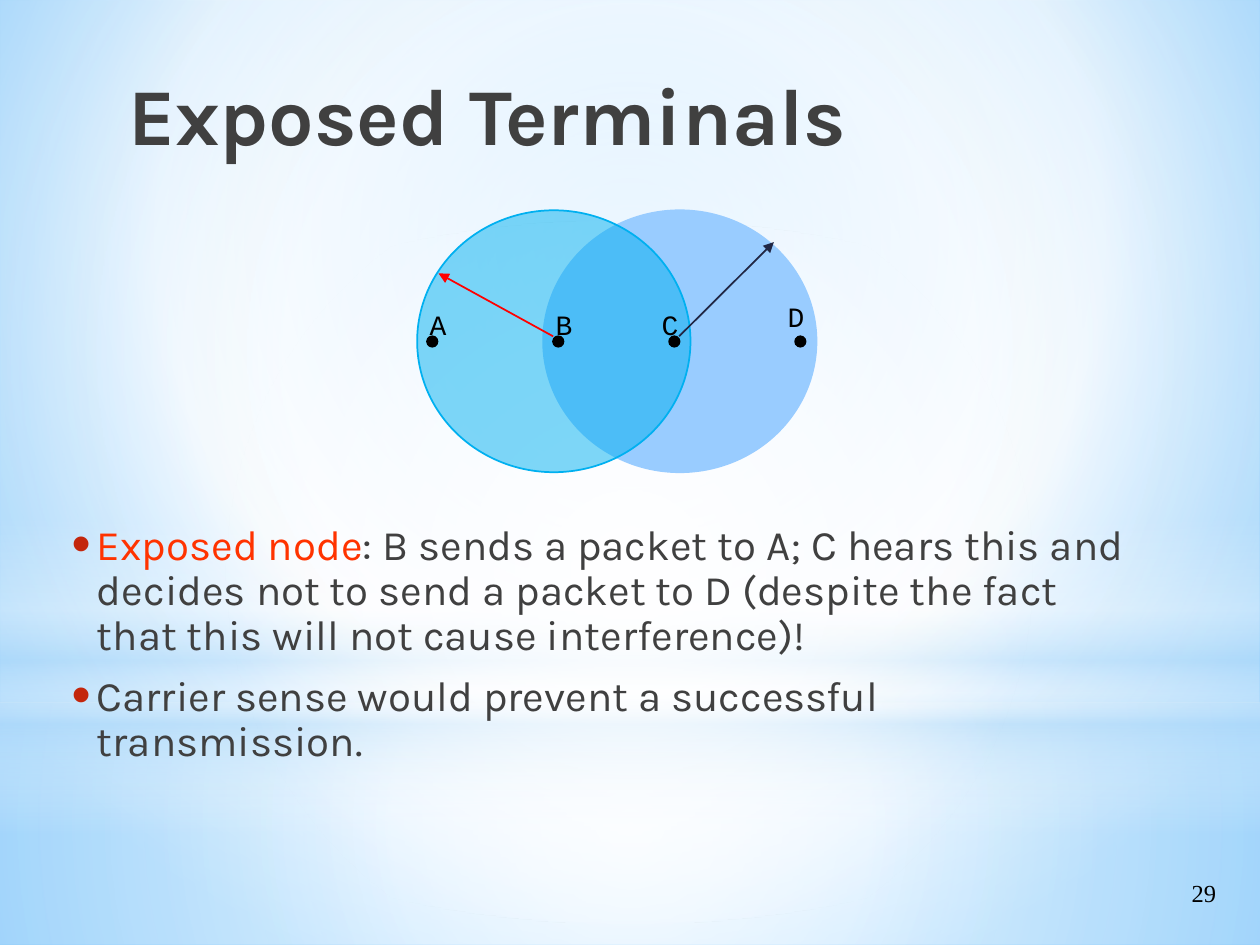
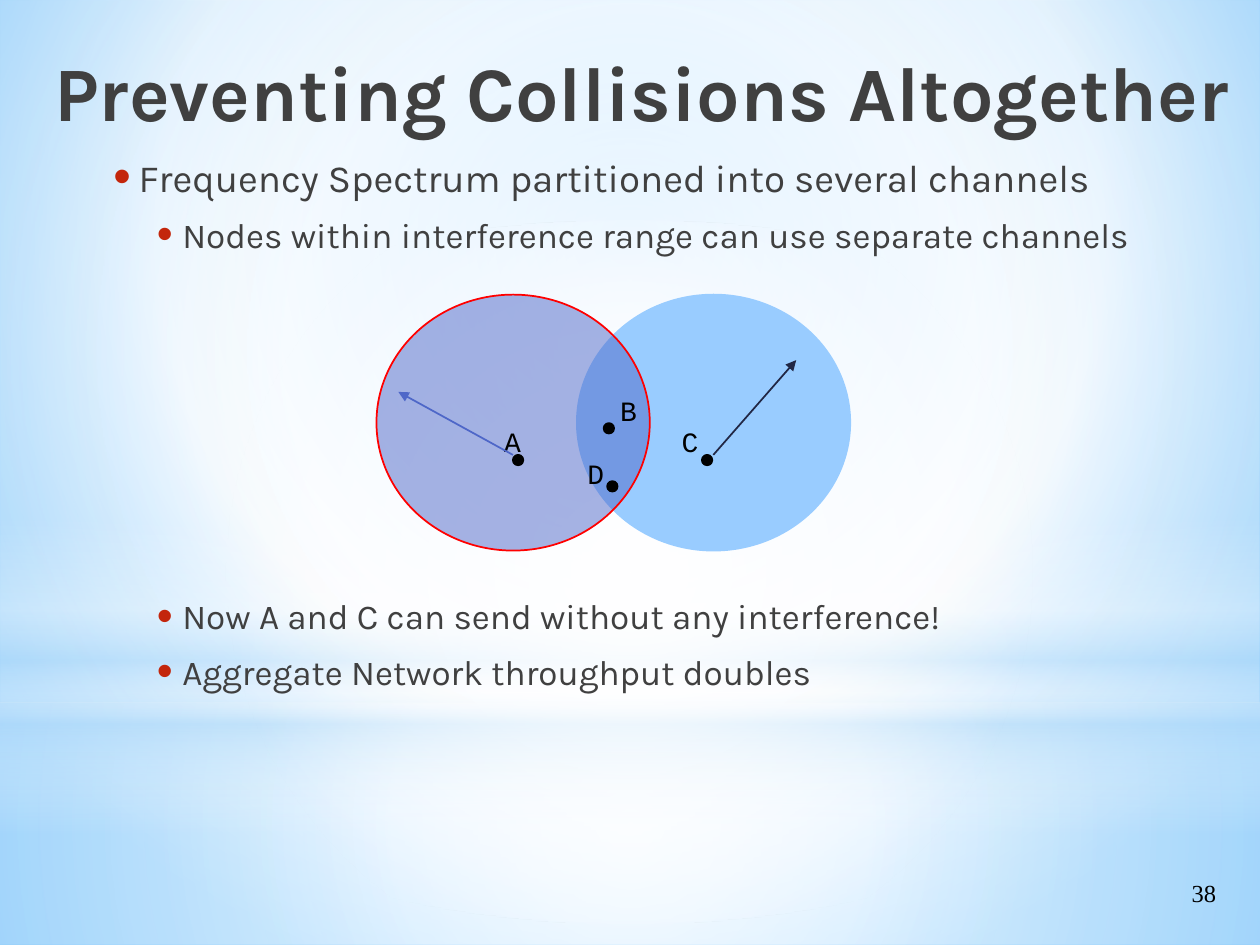
import pptx
import pptx.dml.color
import pptx.enum.shapes
import pptx.enum.text
import pptx.oxml
import pptx.oxml.ns
import pptx.util
from lxml import etree

Cm = pptx.util.Cm
Pt = pptx.util.Pt
SHAPES = pptx.enum.shapes.MSO_SHAPE
ALIGN = pptx.enum.text.PP_ALIGN

WIDTH, HEIGHT = 25.4, 19.05
BLACK, RED = "000000", "FF0000"
TEXT, HIGHLIGHT, BULLET = "404040", "FF3300", "C3260C"
SKY, CYAN, INDIGO, NAVY = "99CCFF", "00B0F0", "4E67C8", "212745"
WHITE, HAZE = "FFFFFF", "B4DCFA"
BODY_FONT, LABEL_FONT, NUMBER_FONT = "Karla", "Courier New", "Times New Roman"
CENTRE = (50, 50, 50, 50)
DOT = 0.21
CIRCLE_WIDTH = 5.51

BACKGROUND_STOPS = [(0, "9ED5FF", 100), (60, WHITE, 100), (100, "5BB9FF", 100)]
BANDS = [
    (SHAPES.RECTANGLE, 14.17, 4.88, [(0, WHITE, 91), (37, WHITE, 76), (100, HAZE, 79)], CENTRE),
    (SHAPES.RECTANGLE, 0, 14.17, [(0, WHITE, 89), (48, WHITE, 62), (100, HAZE, 79)], CENTRE),
    (SHAPES.RECTANGLE, 10.46, 6.35,
     [(0, WHITE, 0), (29, WHITE, 30), (45, HAZE, 40), (55, WHITE, 26), (65, HAZE, 60), (100, WHITE, 0)], None),
    (SHAPES.OVAL, 4.45, 14.17, [(0, WHITE, 100), (56, WHITE, 0)], CENTRE),
]


def color(hex_string):
    return pptx.dml.color.RGBColor.from_string(hex_string)


def add_element(parent, tag, **attributes):
    return etree.SubElement(parent, pptx.oxml.ns.qn(tag), {key: str(value) for key, value in attributes.items()})


def set_gradient(owner, stops, focus=None):
    no_fill = next(owner.iter(pptx.oxml.ns.qn("a:noFill")))
    gradient = pptx.oxml.parse_xml(f'<a:gradFill {pptx.oxml.ns.nsdecls("a")} rotWithShape="1"/>')
    stop_list = add_element(gradient, "a:gsLst")
    for position, hex_string, opacity in stops:
        stop = add_element(stop_list, "a:gs", pos=position * 1000)
        stop_color = add_element(stop, "a:srgbClr", val=hex_string)
        add_element(stop_color, "a:alpha", val=opacity * 1000)
    if focus:
        circle = add_element(gradient, "a:path", path="circle")
        add_element(circle, "a:fillToRect", **{side: value * 1000 for side, value in zip("ltrb", focus)})
    else:
        add_element(gradient, "a:lin", ang=5400000, scaled=0)
    no_fill.getparent().replace(no_fill, gradient)


class Deck:
    def __init__(self):
        self.presentation = pptx.Presentation()
        self.presentation.slide_width = Cm(WIDTH)
        self.presentation.slide_height = Cm(HEIGHT)
        self.slide = None

    def new_slide(self, number):
        self.slide = self.presentation.slides.add_slide(self.presentation.slide_layouts[1])
        self.text_box(number, (22.23, 17.58, 2.54, 1.07), 14, NUMBER_FONT, ALIGN.RIGHT, True)

    def backdrop(self):
        master = self.presentation.slide_master
        master.background.fill.background()
        set_gradient(master.element, BACKGROUND_STOPS, (20, 10, 20, 60))
        for order, (kind, top, height, stops, focus) in enumerate(BANDS):
            band = self.shape(kind, (0, top, WIDTH, height))
            band.fill.background()
            set_gradient(band.element, stops, focus)
            band.line.fill.background()
            master.shapes.element.insert(2 + order, band.element)

    def place(self, shape, box):
        shape.left, shape.top, shape.width, shape.height = map(Cm, box)

    def run(self, paragraph, text, size, font=BODY_FONT, hex_string=TEXT, bold=False):
        run = paragraph.add_run()
        run.text = text
        run.font.size = Pt(size)
        run.font.name = font
        run.font.bold = bold
        run.font.color.rgb = color(hex_string)

    def frame(self, shape, wrap=True):
        frame = shape.text_frame
        frame.word_wrap = wrap
        frame.auto_size = pptx.enum.text.MSO_AUTO_SIZE.NONE
        frame.vertical_anchor = pptx.enum.text.MSO_ANCHOR.TOP
        return frame

    def title(self, text, box, size):
        title = self.slide.shapes.title
        self.place(title, box)
        frame = self.frame(title)
        frame.margin_top = Cm(0.26)
        frame.paragraphs[0].alignment = ALIGN.LEFT
        self.run(frame.paragraphs[0], text, size, bold=True)

    def bullets(self, items, box, line_spacing=1.0):
        body = self.slide.placeholders[1]
        self.place(body, box)
        frame = self.frame(body)
        for index, (level, size, gap, runs) in enumerate(items):
            paragraph = frame.paragraphs[0] if index == 0 else frame.add_paragraph()
            paragraph.level = level
            paragraph.alignment = ALIGN.LEFT
            paragraph.line_spacing = line_spacing
            paragraph.space_before = Pt(gap)
            paragraph.space_after = Pt(3)
            self.bullet(paragraph, 0.64 + 0.88 * level)
            for text, hex_string in runs:
                self.run(paragraph, text, size, hex_string=hex_string)

    def bullet(self, paragraph, indent):
        properties = paragraph._p.get_or_add_pPr()
        properties.set("marL", str(Cm(indent)))
        properties.set("indent", str(Cm(-0.51)))
        add_element(add_element(properties, "a:buClr"), "a:srgbClr", val=BULLET)
        add_element(properties, "a:buSzPct", val=130000)
        add_element(properties, "a:buFont", typeface="Arial")
        add_element(properties, "a:buChar", char="•")

    def text_box(self, text, box, size, font, alignment, wrap=False):
        frame = self.frame(self.slide.shapes.add_textbox(*map(Cm, box)), wrap)
        frame.paragraphs[0].alignment = alignment
        self.run(frame.paragraphs[0], text, size, font, BLACK)

    def shape(self, kind, box):
        shape = self.slide.shapes.add_shape(kind, *map(Cm, box))
        shape.shadow.inherit = False
        return shape

    def ellipse(self, box, fill, line, opacity=100):
        ellipse = self.shape(SHAPES.OVAL, box)
        ellipse.fill.solid()
        ellipse.fill.fore_color.rgb = color(fill)
        ellipse.line.color.rgb = color(line)
        ellipse.line.width = Pt(1)
        if opacity < 100:
            fill_color = next(ellipse.element.iter(pptx.oxml.ns.qn("a:srgbClr")))
            add_element(fill_color, "a:alpha", val=opacity * 1000)

    def ranges(self, left, right, top, height, fill, line):
        self.ellipse((right, top, CIRCLE_WIDTH, height), SKY, SKY)
        self.ellipse((left, top, CIRCLE_WIDTH, height), fill, line, 50)

    def node(self, name, dot, label):
        self.ellipse((*dot, DOT, DOT), BLACK, BLACK)
        self.text_box(name, (*label, 0.9, 0.91), 16, LABEL_FONT, ALIGN.CENTER)

    def arrow(self, start, end, hex_string):
        arrow = self.slide.shapes.add_connector(
            pptx.enum.shapes.MSO_CONNECTOR.STRAIGHT, *map(Cm, (*start, *end)))
        arrow.line.color.rgb = color(hex_string)
        arrow.line.width = Pt(1)
        add_element(arrow.line._get_or_add_ln(), "a:tailEnd", type="triangle")
        add_element(arrow.element.spPr, "a:effectLst")


def exposed_terminals(deck):
    deck.title("Exposed Terminals", (2.33, 1.06, 20.1, 1.9), 46)
    deck.bullets([
        (0, 24, 5.6, [
            ("Exposed node", HIGHLIGHT),
            (": B sends a packet to A; C hears this and decides not to send a packet to D "
             "(despite the fact that this will not cause interference)!", TEXT)]),
        (0, 24, 5.6, [("Carrier sense would prevent a successful transmission.", TEXT)]),
    ], (1.06, 10.43, 22.23, 6.7), 0.9)
    deck.ranges(8.41, 10.95, 4.24, 5.28, CYAN, CYAN)
    for name, dot_left, label_left, label_top in [
            ("A", 8.61, 8.38, 6.07), ("B", 11.15, 10.92, 6.07),
            ("C", 13.49, 13.06, 6.07), ("D", 16.03, 15.6, 5.92)]:
        deck.node(name, (dot_left, 6.78), (label_left, label_top))
    deck.arrow((13.69, 6.78), (15.6, 4.88), NAVY)
    deck.arrow((11.15, 6.78), (8.84, 5.51), RED)


def preventing_collisions(deck):
    deck.title("Preventing Collisions Altogether", (0.84, 0.64, 24.56, 1.9), 44)
    deck.bullets([
        (0, 22, 5.1, [("Frequency Spectrum partitioned into several channels", TEXT)]),
        (1, 20, 4.7, [("Nodes within interference range can use separate channels", TEXT)]),
        (1, 20, 191, [("Now A and C can send without any interference!", TEXT)]),
        (1, 20, 4.7, [("Aggregate Network throughput doubles", TEXT)]),
    ], (1.9, 2.97, 23.5, 15.67))
    deck.ranges(7.59, 11.63, 5.94, 5.16, INDIGO, RED)
    for name, dot, label in [
            ("A", (10.34, 9.17), (9.88, 8.43)), ("B", (12.17, 8.53), (12.22, 7.8)),
            ("C", (14.15, 9.17), (13.46, 8.43)), ("D", (12.24, 9.7), (11.56, 9.07))]:
        deck.node(name, dot, label)
    deck.arrow((14.38, 9.17), (16.05, 7.26), NAVY)
    deck.arrow((10.34, 9.17), (8.03, 7.9), INDIGO)


def main():
    deck = Deck()
    deck.new_slide("29")
    deck.backdrop()
    exposed_terminals(deck)
    deck.new_slide("38")
    preventing_collisions(deck)
    deck.presentation.save("out.pptx")


if __name__ == "__main__":
    main()
